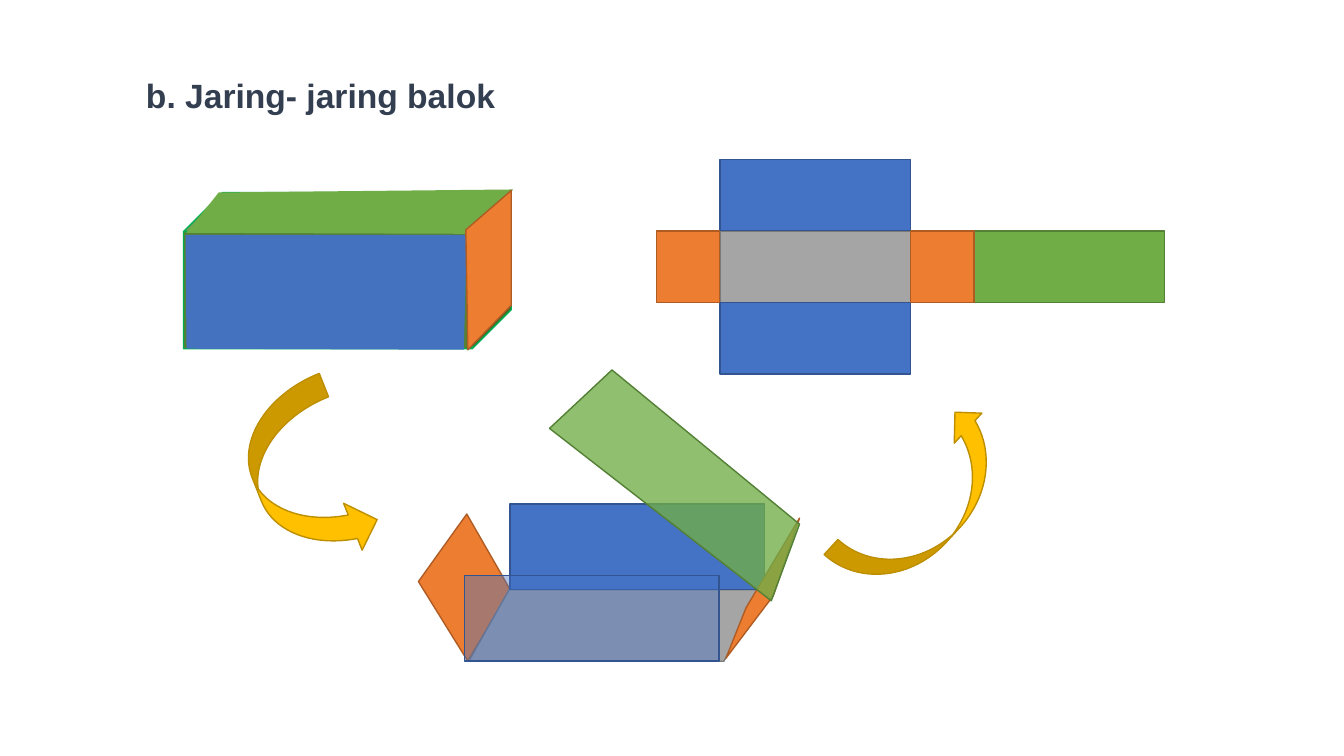
from pptx import Presentation
from pptx.dml.color import RGBColor
from pptx.enum.shapes import MSO_SHAPE
from pptx.oxml.xmlchemy import OxmlElement
from pptx.util import Inches, Pt

BLUE, ORANGE, GRAY, GREEN, GOLD = "4472C4", "ED7D31", "A5A5A5", "70AD47", "FFC000"
EDGE = {BLUE: "325491", ORANGE: "AF5C24", GRAY: "7A7A7A", GREEN: "538035", GOLD: "BD8E00"}


def rgb(value):
    return RGBColor.from_string(value)


def paint(sp, fill, line=None, opacity=100):
    """Fill and outline a shape; without a line colour it has no outline."""
    sp.shadow.inherit = False
    sp.fill.solid()
    sp.fill.fore_color.rgb = rgb(fill)
    if opacity < 100:
        alpha = OxmlElement("a:alpha")
        alpha.set("val", str(opacity * 1000))
        sp.fill._xPr.find(".//{*}srgbClr").append(alpha)
    if line:
        sp.line.color.rgb = rgb(line)
        sp.line.width = Pt(1)
    else:
        sp.line.fill.background()


def add_preset(s, kind, x, y, w, h, fill, line=None, opacity=100):
    sp = s.shapes.add_shape(kind, Inches(x), Inches(y), Inches(w), Inches(h))
    paint(sp, fill, line or EDGE[fill], opacity)
    return sp


def add_polygon(s, x, y, points, fill, line=None, opacity=100):
    """Draw a closed outline whose points are relative to (x, y)."""
    pts = [(Inches(x + dx), Inches(y + dy)) for dx, dy in points]
    builder = s.shapes.build_freeform(*pts[0])
    builder.add_line_segments(pts[1:], close=True)
    paint(builder.convert_to_shape(), fill, line, opacity)


def add_title(s, x, y, w, h):
    tf = s.shapes.add_textbox(Inches(x), Inches(y), Inches(w), Inches(h)).text_frame
    tf.word_wrap = True
    p = tf.paragraphs[0]
    p.text = "b. Jaring- jaring balok"
    p.font.name, p.font.size, p.font.bold = "Arial", Pt(24), True
    p.font.color.rgb = rgb("333F50")


def add_open_box(s, x, y):
    """Half-unfolded block with its lid lifted."""
    w, h, depth = 2.52, 0.85, 0.71
    add_polygon(s, x, y, [(0, 2.1), (0.48, 1.43), (0.91, 2.18), (0.49, 2.89)],
                ORANGE, EDGE[ORANGE])
    base = add_preset(s, MSO_SHAPE.PARALLELOGRAM, x + 0.5, y + 2.18, 2.93, depth, GRAY)
    base.adjustments[0] = 0.563
    add_preset(s, MSO_SHAPE.RECTANGLE, x + 0.91, y + 1.33, w, h, BLUE)
    add_preset(s, MSO_SHAPE.RECTANGLE, x + 0.46, y + 2.04, w, h, BLUE, opacity=42)
    add_polygon(s, x, y, [(3.52, 2.24), (3.78, 1.47), (3.25, 2.36), (3.05, 2.86)],
                ORANGE, EDGE[ORANGE])
    add_polygon(s, x, y, [(1.3, 0.58), (1.92, 0), (3.78, 1.53), (3.5, 2.29)],
                GREEN, EDGE[GREEN], 78)


def add_net(s, x, y, long=1.89, short=0.63, h=0.71):
    """Flat net: a row of four faces, with one above and one below the base."""
    base_x, right_x = x + short, x + short + long
    faces = [(base_x, 1, long, GRAY), (base_x, 0, long, BLUE), (base_x, 2, long, BLUE),
             (right_x + short, 1, long, GREEN), (right_x, 1, short, ORANGE),
             (x, 1, short, ORANGE)]
    for left, row, w, fill in faces:
        add_preset(s, MSO_SHAPE.RECTANGLE, left, y + row * h, w, h, fill)


def add_closed_box(s, x, y):
    add_preset(s, MSO_SHAPE.CUBE, x, y + 0.03, 3.25, 1.55, "548235", "00B050")
    add_polygon(s, x, y, [(0.02, 0.45), (0.03, 1.58), (2.78, 1.59), (2.81, 0.45)],
                BLUE, opacity=97)
    add_polygon(s, x, y, [(0.03, 0.43), (0.35, 0.03), (3.27, 0), (2.89, 0.44)], GREEN)
    add_polygon(s, x, y, [(2.82, 1.59), (2.8, 0.4), (3.25, 0.01), (3.25, 1.15)],
                ORANGE, EDGE[ORANGE])


def add_turn_arrow(s, x, y, w, h, angle):
    sp = add_preset(s, MSO_SHAPE.CURVED_DOWN_ARROW, x, y, w, h, GOLD)
    sp.rotation = angle
    sp._element.spPr.xfrm.set("flipH", "1")


def main():
    prs = Presentation()
    prs.slide_width, prs.slide_height = Inches(13.33), Inches(7.5)
    s = prs.slides.add_slide(prs.slide_layouts[6])
    add_title(s, 1.35, 0.69, 4.53, 0.5)
    add_open_box(s, 4.15, 3.67)
    add_net(s, 6.51, 1.58)
    add_closed_box(s, 1.82, 1.88)
    add_turn_arrow(s, 8.13, 4.59, 2.12, 0.81, 132.6)
    add_turn_arrow(s, 2.13, 4.23, 1.81, 1, 248.4)
    prs.save("out.pptx")


if __name__ == "__main__":
    main()
